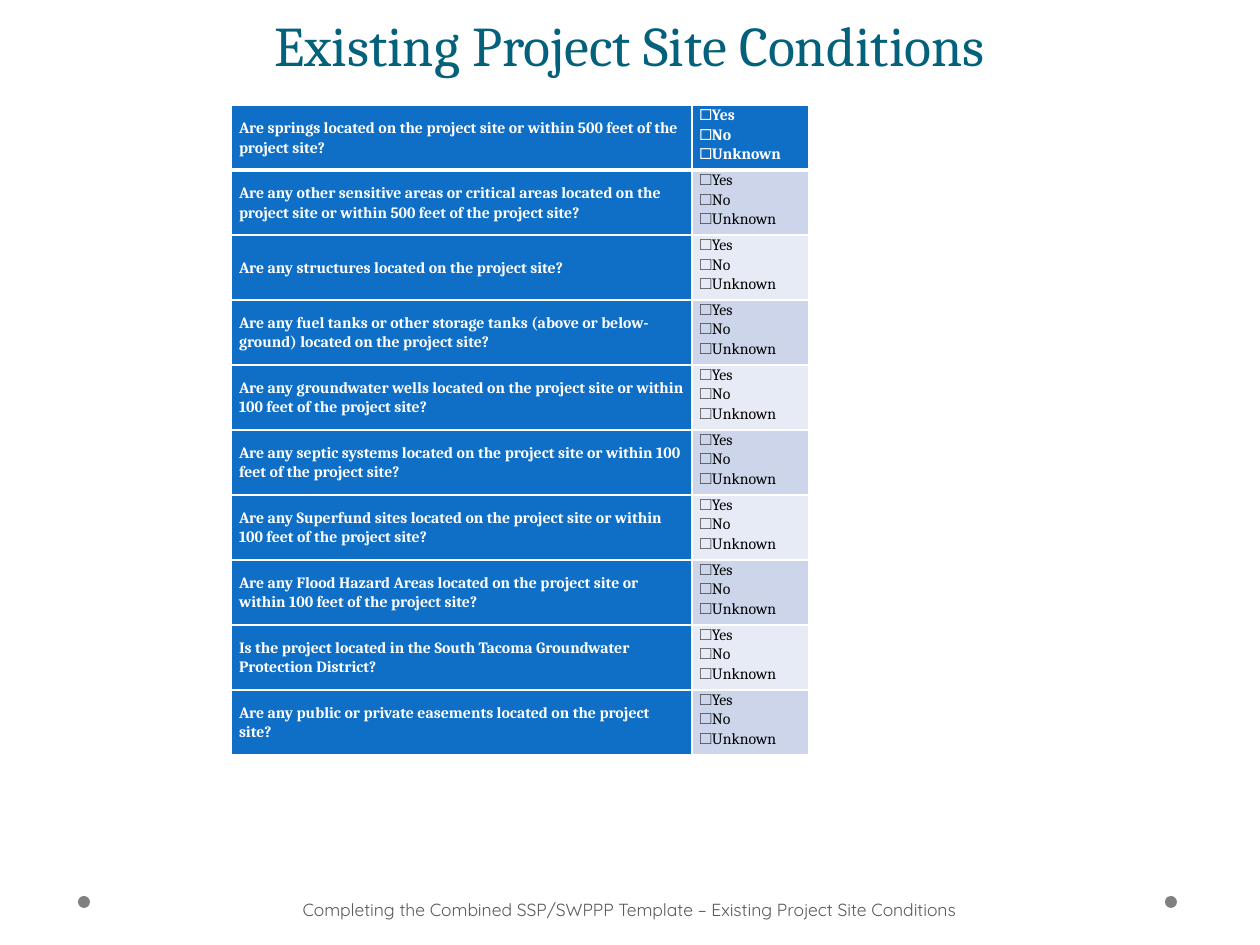
from dataclasses import dataclass

from lxml.etree import SubElement
from pptx import Presentation
from pptx.dml.color import RGBColor
from pptx.enum.shapes import MSO_SHAPE
from pptx.enum.text import MSO_ANCHOR, PP_ALIGN
from pptx.oxml.ns import qn
from pptx.util import Emu, Pt

PX_PER_INCH = 126
BLUE, WHITE, BLACK = "0F6FC6", "FFFFFF", "000000"
BANDS = ("CCD5EA", "E7EBF5")
ANSWERS = ("☐Yes", "☐No", "☐Unknown")
QUESTIONS = (
    "Are springs located on the project site or within 500 feet of the project site?",
    "Are any other sensitive areas or critical areas located on the project site"
    " or within 500 feet of the project site?",
    "Are any structures located on the project site?",
    "Are any fuel tanks or other storage tanks (above or below-ground) located on the project site?",
    "Are any groundwater wells located on the project site or within 100 feet of the project site?",
    "Are any septic systems located on the project site or within 100 feet of the project site?",
    "Are any Superfund sites located on the project site or within 100 feet of the project site?",
    "Are any Flood Hazard Areas located on the project site or within 100 feet of the project site?",
    "Is the project located in the South Tacoma Groundwater Protection District?",
    "Are any public or private easements located on the project site?",
)


@dataclass(frozen=True)
class Box:
    left: int
    top: int
    width: int
    height: int

    def emu(self) -> tuple:
        return tuple(px(v) for v in (self.left, self.top, self.width, self.height))


@dataclass(frozen=True)
class Style:
    font: str
    size: int
    color: str
    bold: bool = False


def px(n: int) -> Emu:
    return Emu(round(n * 914400 / PX_PER_INCH))


def rgb(color: str) -> RGBColor:
    return RGBColor.from_string(color)


def add_run(p, text: str, style: Style) -> None:
    r = p.add_run()
    r.text = text
    r.font.name = style.font
    r.font.size = Pt(style.size)
    r.font.bold = style.bold
    r.font.color.rgb = rgb(style.color)


def add_label(s, box: Box, text: str, style: Style, anchor, insets: tuple, spacing=None) -> None:
    tf = s.shapes.add_textbox(*box.emu()).text_frame
    tf.word_wrap = True
    tf.vertical_anchor = anchor
    tf.margin_left, tf.margin_top, tf.margin_right, tf.margin_bottom = map(px, insets)
    p = tf.paragraphs[0]
    p.alignment = PP_ALIGN.CENTER
    p.line_spacing = spacing
    add_run(p, text, style)


def add_dot(s, box: Box) -> None:
    sp = s.shapes.add_shape(MSO_SHAPE.OVAL, *box.emu())
    sp.shadow.inherit = False
    sp.fill.solid()
    sp.fill.fore_color.rgb = rgb("808080")
    sp.line.fill.background()


def set_borders(cell, top: int, bottom: int) -> None:
    tc_pr = cell._tc.get_or_add_tcPr()
    for side, width in (("L", 1), ("R", 1), ("T", top), ("B", bottom)):
        ln = SubElement(tc_pr, qn(f"a:ln{side}"), w=str(Pt(width)))
        SubElement(SubElement(ln, qn("a:solidFill")), qn("a:srgbClr"), val=WHITE)


def fill_cell(cell, lines: tuple, style: Style, fill: str, anchor, row: int) -> None:
    cell.margin_left = cell.margin_right = px(8)
    cell.margin_top = cell.margin_bottom = 0
    cell.vertical_anchor = anchor
    set_borders(cell, top=3 if row == 1 else 1, bottom=3 if row == 0 else 1)
    cell.fill.solid()
    cell.fill.fore_color.rgb = rgb(fill)
    tf = cell.text_frame
    for i, line in enumerate(lines):
        p = tf.paragraphs[0] if i == 0 else tf.add_paragraph()
        p.line_spacing = 1.07
        add_run(p, line, style)


def add_checklist(s, box: Box, col_widths: tuple) -> None:
    table = s.shapes.add_table(len(QUESTIONS), len(col_widths), *box.emu()).table
    for column, width in zip(table.columns, col_widths):
        column.width = px(width)
    strong = Style("Cambria", 9, WHITE, True)
    plain = Style("Cambria", 9, BLACK)
    for i, question in enumerate(QUESTIONS):
        table.rows[i].height = px(box.height // len(QUESTIONS))
        fill_cell(table.cell(i, 0), (question,), strong, BLUE, MSO_ANCHOR.MIDDLE, i)
        style, fill = (strong, BLUE) if i == 0 else (plain, BANDS[(i - 1) % 2])
        fill_cell(table.cell(i, 1), ANSWERS, style, fill, MSO_ANCHOR.TOP, i)


def main() -> None:
    prs = Presentation()
    prs.slide_width, prs.slide_height = px(1260), px(945)
    s = prs.slides.add_slide(prs.slide_layouts[6])
    s.background.fill.solid()
    s.background.fill.fore_color.rgb = rgb(WHITE)

    # Footer dots
    for left in (1165, 78):
        add_dot(s, Box(left, 896, 12, 12))

    # Title
    add_label(s, Box(63, 0, 1134, 84), "Existing Project Site Conditions",
              Style("Cambria", 32, "04617B"), MSO_ANCHOR.BOTTOM, (13, 6, 13, 6), Pt(58))

    # Checklist table
    add_checklist(s, Box(231, 105, 578, 650), (461, 117))

    # Footer
    add_label(s, Box(95, 885, 1075, 50),
              "Completing the Combined SSP/SWPPP Template – Existing Project Site Conditions",
              Style("Quicksand", 10, "595959"), MSO_ANCHOR.MIDDLE, (6, 6, 13, 6))

    prs.save("out.pptx")


if __name__ == "__main__":
    main()
